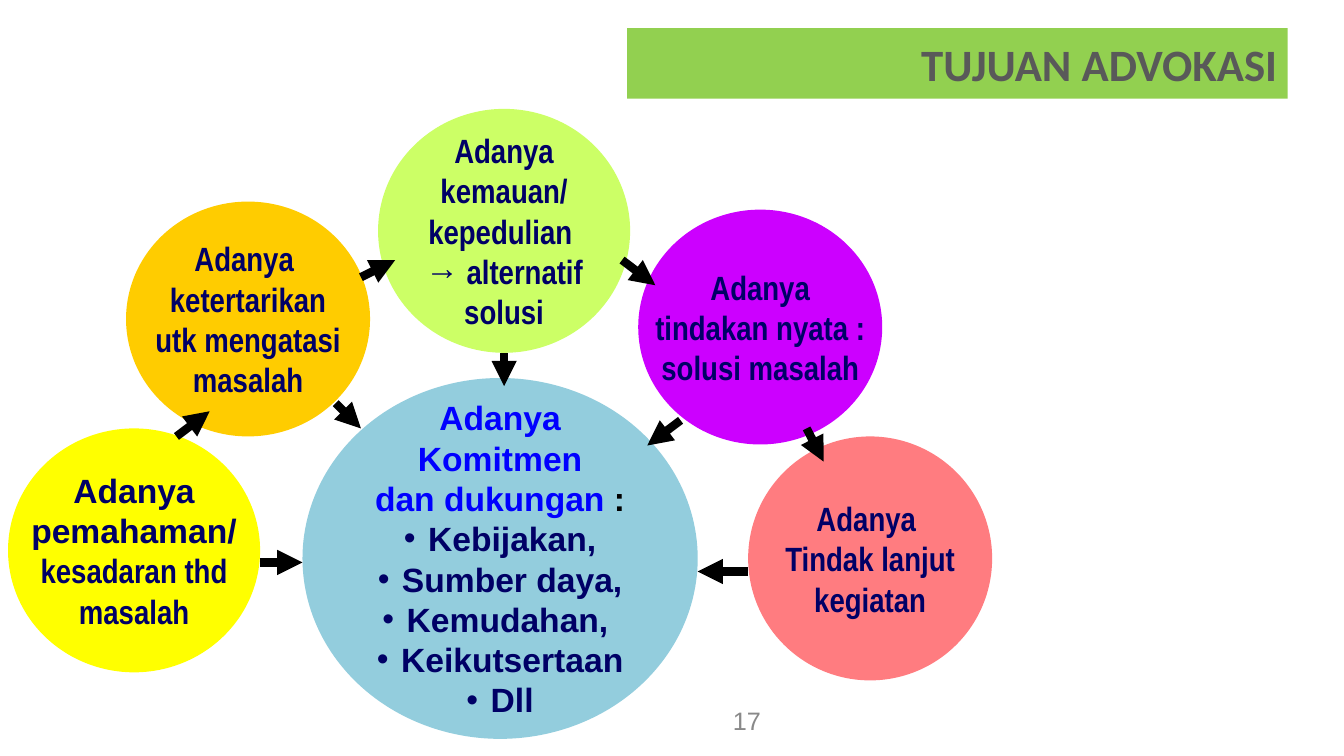
from pptx import Presentation
from pptx.dml.color import RGBColor
from pptx.enum.shapes import MSO_CONNECTOR, MSO_SHAPE
from pptx.enum.text import MSO_ANCHOR, PP_ALIGN
from pptx.oxml.ns import qn
from pptx.util import Inches, Pt
from lxml import etree

NAVY, BLUE, BLACK = "000066", "0000FF", "000000"
WIDE, SLIM = "Arial", "Arial Narrow"

# Circles: box, fill, lines of (text, font)
STEPS = [
    ((1.25, 2, 2.42, 2.33), "FFCC00",
     [("Adanya ", SLIM), ("ketertarikan", SLIM), ("utk mengatasi", SLIM), ("masalah", SLIM)]),
    ((0.08, 4.25, 2.5, 2.42), "FFFF00",
     [("Adanya", WIDE), ("pemahaman/", WIDE), ("kesadaran thd", SLIM), ("masalah", SLIM)]),
    ((7.42, 4.33, 2.42, 2.42), "FF7C80",
     [("Adanya ", SLIM), ("Tindak lanjut", SLIM), ("kegiatan", SLIM)]),
    ((3.75, 1.08, 2.5, 2.42), "CCFF66",
     [("Adanya", SLIM), ("kemauan/", SLIM), ("kepedulian ", SLIM), ("→ alternatif", SLIM),
      ("solusi", SLIM)]),
    ((6.33, 2.08, 2.42, 2.33), "CC00FF",
     [("Adanya", SLIM), ("tindakan nyata :", SLIM), ("solusi masalah", SLIM)]),
]
GOALS = ["Kebijakan,", "Sumber daya,", "Kemudahan, ", "Keikutsertaan", "Dll"]

# Arrows: start x, start y, end x, end y
ARROWS = [
    (2.58, 5.58, 3, 5.58), (6.75, 4.17, 6.42, 4.42), (5, 3.5, 5, 3.83),
    (3.33, 4, 3.58, 4.25), (7.42, 5.67, 6.92, 5.67), (1.75, 4.33, 2.08, 4.08),
    (3.58, 2.75, 3.92, 2.58), (6.17, 2.58, 6.5, 2.83), (8, 4.25, 8.17, 4.58),
]


def tint(part, color):
    if hasattr(part, "solid"):
        part.solid()
        part = part.fore_color
    part.rgb = RGBColor.from_string(color)


def style(item, form):
    for key, value in form.items():
        setattr(item, key, value)


def write(para, text, color, **form):
    run = para.add_run()
    run.text = text
    style(run.font, form)
    tint(run.font.color, color)


def bullet(para):
    props = para._p.get_or_add_pPr()
    props.set("marL", str(Inches(0.24)))
    props.set("indent", str(Inches(-0.24)))
    etree.SubElement(props, qn("a:buFont")).set("typeface", WIDE)
    etree.SubElement(props, qn("a:buChar")).set("char", "•")


def circle(slide, box, color):
    shape = slide.shapes.add_shape(MSO_SHAPE.OVAL, *map(Inches, box))
    shape.shadow.inherit = False
    tint(shape.fill, color)
    shape.line.fill.background()
    frame = shape.text_frame
    style(frame, {"word_wrap": False, "vertical_anchor": MSO_ANCHOR.MIDDLE})
    return frame


def line(frame, first=False):
    para = frame.paragraphs[0] if first else frame.add_paragraph()
    para.alignment = PP_ALIGN.CENTER
    return para


def step(slide, box, color, rows):
    frame = circle(slide, box, color)
    for i, (text, font) in enumerate(rows):
        write(line(frame, i == 0), text, NAVY, name=font, size=Pt(24), bold=True)


def center(slide):
    form = {"name": WIDE, "size": Pt(24), "bold": True}
    frame = circle(slide, (3, 3.75, 3.92, 3.58), "93CDDD")
    for i, text in enumerate(["Adanya", "Komitmen", "dan dukungan"]):
        para = line(frame, i == 0)
        write(para, text, BLUE, **form)
    write(para, " :", BLACK, **form)
    for text in GOALS:
        para = line(frame)
        bullet(para)
        write(para, text, NAVY, **form)


def arrow(slide, ends):
    link = slide.shapes.add_connector(MSO_CONNECTOR.STRAIGHT, *map(Inches, ends))
    link.line.width = Pt(6)
    tint(link.line.fill, BLACK)
    etree.SubElement(link.line._get_or_add_ln(), qn("a:tailEnd")).set("type", "triangle")
    etree.SubElement(link._element.spPr, qn("a:effectLst"))


def heading(slide):
    title = slide.shapes.title
    style(title, {"left": Inches(6.22), "top": Inches(0.28),
                  "width": Inches(6.55), "height": Inches(0.7)})
    tint(title.fill, "92D050")
    title.text_frame.vertical_anchor = MSO_ANCHOR.MIDDLE
    para = title.text_frame.paragraphs[0]
    para.alignment = PP_ALIGN.RIGHT
    write(para, "TUJUAN ADVOKASI", "595959", name="Calibri", size=Pt(32), bold=True)


def number(slide):
    box = slide.shapes.add_textbox(*map(Inches, (7.17, 6.95, 2.33, 0.4)))
    style(box.text_frame, {"word_wrap": True, "vertical_anchor": MSO_ANCHOR.MIDDLE})
    write(box.text_frame.paragraphs[0], "17", "898989", name=WIDE, size=Pt(18))


def main():
    deck = Presentation()
    style(deck, {"slide_width": Inches(13.33), "slide_height": Inches(7.5)})
    slide = deck.slides.add_slide(deck.slide_layouts[5])
    heading(slide)
    number(slide)
    center(slide)
    for item in STEPS:
        step(slide, *item)
    for ends in ARROWS:
        arrow(slide, ends)
    deck.save("out.pptx")


if __name__ == "__main__":
    main()
